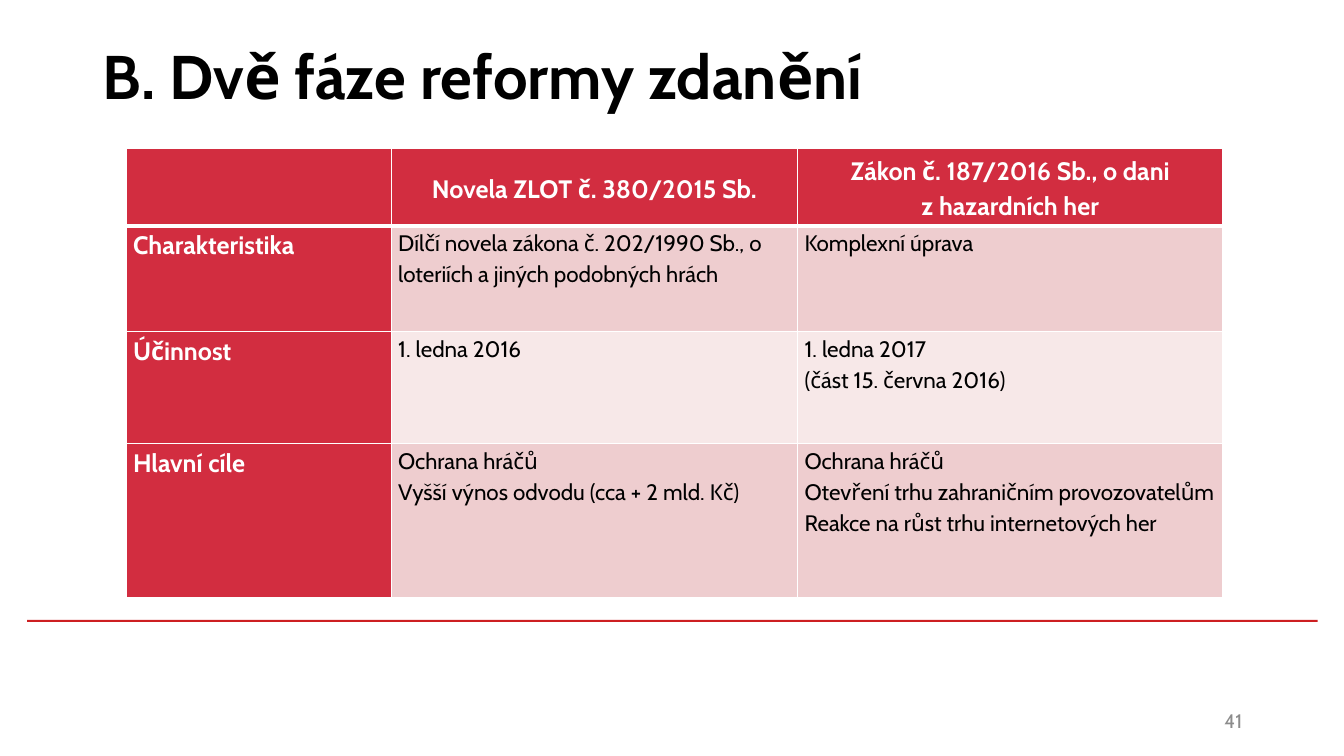
from lxml import etree
from pptx import Presentation, util as u
from pptx.dml.color import RGBColor
from pptx.enum import shapes, text
from pptx.oxml.ns import qn

FONT = "Cabin"
WHITE = RGBColor(0xFF, 0xFF, 0xFF)
BLACK = RGBColor(0x00, 0x00, 0x00)
GREY = RGBColor(0x8C, 0x8C, 0x8C)
RED = RGBColor(0xD2, 0x2D, 0x40)
RULE_RED = RGBColor(0xCD, 0x1F, 0x21)
BANDS = [RGBColor(0xEE, 0xCD, 0xCF), RGBColor(0xF7, 0xE8, 0xE8)]

COLS = [2.63, 4.03, 4.22]
ROWS = [0.77, 1.05, 1.11, 1.53]
REFORM = [
    ["", "Novela ZLOT č. 380/2015 Sb.", "Zákon č. 187/2016 Sb., o dani z\u00a0hazardních her"],
    ["Charakteristika",
     "Dílčí novela zákona č. 202/1990 Sb., o loteriích a jiných podobných hrách",
     "Komplexní úprava"],
    ["Účinnost", "1. ledna 2016", "1. ledna 2017\n(část 15. června 2016)"],
    ["Hlavní cíle",
     "Ochrana hráčů\nVyšší výnos odvodu (cca + 2 mld. Kč)",
     "Ochrana hráčů\nOtevření trhu zahraničním provozovatelům\nReakce na růst trhu internetových her"],
]


def style(p, size, color, bold=False, align=text.PP_ALIGN.LEFT):
    p.alignment = align
    p.font.name = FONT
    p.font.size = u.Pt(size)
    p.font.bold = bold
    p.font.color.rgb = color


def add_text(s, box, words, *look):
    tf = s.shapes.add_textbox(*map(u.Inches, box)).text_frame
    tf.word_wrap = True
    tf.vertical_anchor = text.MSO_ANCHOR.MIDDLE
    tf.text = words
    style(tf.paragraphs[0], *look)


def add_rule(s, box):
    sp = s.shapes.add_shape(shapes.MSO_SHAPE.RECTANGLE, *map(u.Inches, box))
    sp.shadow.inherit = False
    sp.fill.solid()
    sp.fill.fore_color.rgb = RULE_RED
    sp.line.fill.background()


def set_borders(cell, widths):
    tc_pr = cell._tc.get_or_add_tcPr()
    for i, (side, width) in enumerate(widths.items()):
        ln = etree.Element(qn(f"a:ln{side}"), w=str(u.Pt(width)))
        fill = etree.SubElement(ln, qn("a:solidFill"))
        etree.SubElement(fill, qn("a:srgbClr"), val=str(WHITE))
        tc_pr.insert(i, ln)


def fill_cell(cell, row, col, words):
    header = row == 0
    label = header or col == 0
    cell.fill.solid()
    cell.fill.fore_color.rgb = RED if label else BANDS[(row - 1) % 2]
    cell.margin_left = cell.margin_right = u.Inches(0.07)
    cell.margin_top = cell.margin_bottom = 0
    cell.vertical_anchor = text.MSO_ANCHOR.MIDDLE if header else text.MSO_ANCHOR.TOP
    cell.text = words
    align = text.PP_ALIGN.CENTER if header else text.PP_ALIGN.LEFT
    for p in cell.text_frame.paragraphs:
        p.line_spacing = 1.15
        style(p, 18 if label else 16, WHITE if label else BLACK, label, align)
    set_borders(cell, {"L": 1, "R": 1, "T": 3 if row == 1 else 1, "B": 3 if header else 1})


def add_reform_table(s, left, top):
    box = left, top, sum(COLS), sum(ROWS)
    table = s.shapes.add_table(len(ROWS), len(COLS), *map(u.Inches, box)).table
    for column, width in zip(table.columns, COLS):
        column.width = u.Inches(width)
    for row, height in zip(table.rows, ROWS):
        row.height = u.Inches(height)
    for r, line in enumerate(REFORM):
        for c, words in enumerate(line):
            fill_cell(table.cell(r, c), r, c, words)


def main():
    prs = Presentation()
    prs.slide_width, prs.slide_height = u.Inches(13.33), u.Inches(7.5)
    s = prs.slides.add_slide(prs.slide_layouts[6])
    add_rule(s, (0.27, 6.15, 12.8, 0.02))
    add_text(s, (0.92, 0.02, 11.5, 1.45), "B. Dvě fáze reformy zdanění", 44, BLACK, True)
    add_text(s, (9.42, 6.95, 3, 0.4), "41", 14, GREY, False, text.PP_ALIGN.RIGHT)
    add_reform_table(s, 1.25, 1.47)
    prs.save("out.pptx")


if __name__ == "__main__":
    main()
